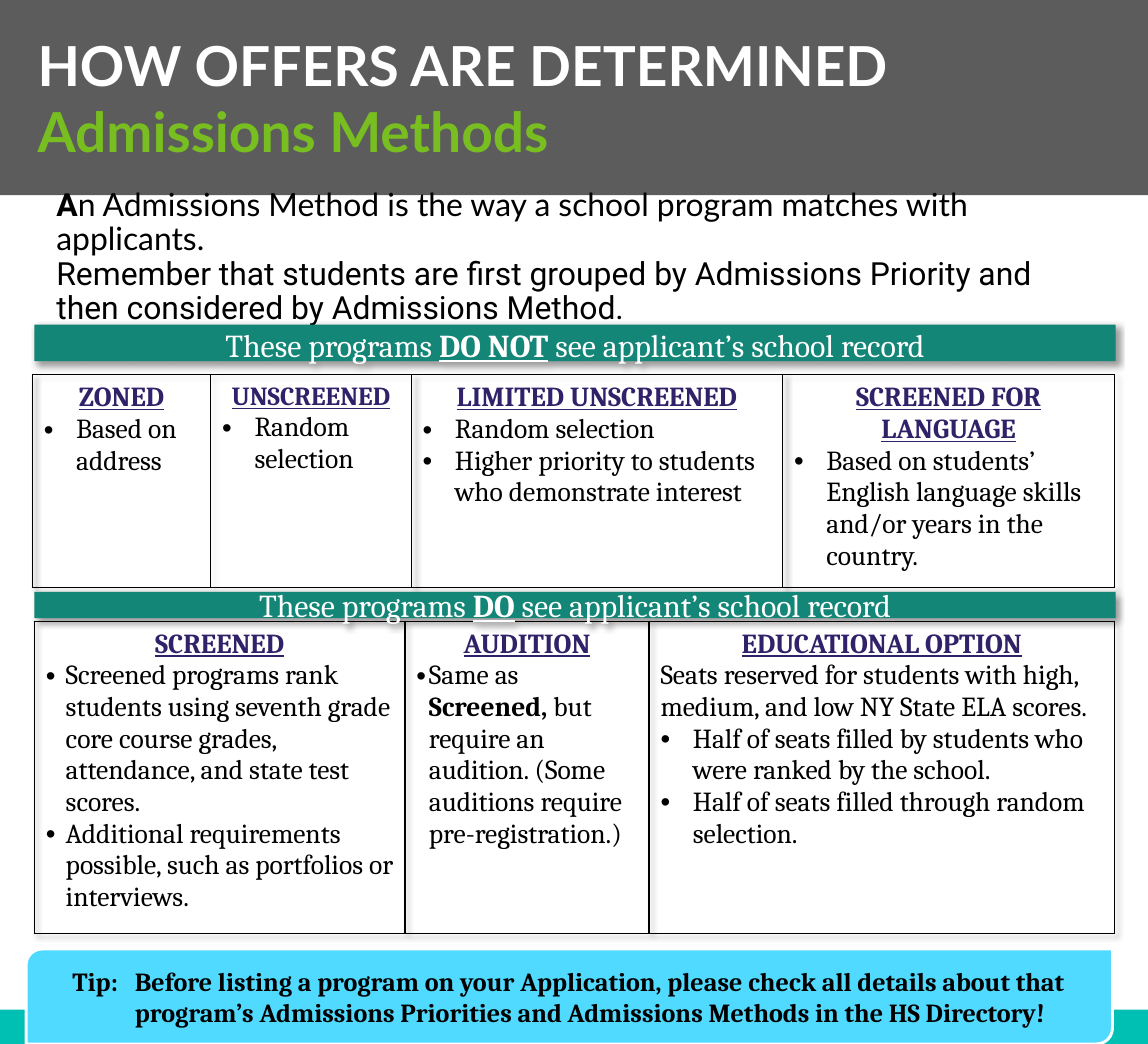
import pptx
import pptx.util
from lxml import etree
from pptx.dml.color import RGBColor
from pptx.enum.dml import MSO_THEME_COLOR
from pptx.enum.shapes import MSO_SHAPE
from pptx.enum.text import MSO_ANCHOR, MSO_AUTO_SIZE, PP_ALIGN
from pptx.oxml import parse_xml
from pptx.oxml.ns import nsdecls, qn
from pptx.util import Inches, Pt

WHITE = RGBColor(0xFF, 0xFF, 0xFF)
BLACK = RGBColor(0x00, 0x00, 0x00)
GRAY = RGBColor(0x40, 0x40, 0x40)
LIME = RGBColor(0x78, 0xBE, 0x20)
GREEN = RGBColor(0x13, 0x86, 0x77)
TEAL = RGBColor(0x00, 0xBF, 0xB3)
SKY = RGBColor(0x51, 0xDA, 0xFF)
PURPLE = RGBColor(0x30, 0x21, 0x69)

# Each column: heading, heading size, bullet indent, paragraphs.
# A leading "•" makes a bullet, and *text* is emphasised.
NO_RECORD = [
    ("ZONED", 19, 0.31, ["•Based on address"]),
    ("UNSCREENED", 18, 0.31, ["•Random selection"]),
    ("LIMITED UNSCREENED", 19, 0.31,
     ["•Random selection",
      "•Higher priority to students who demonstrate interest"]),
    ("SCREENED FOR LANGUAGE", 19, 0.31,
     ["•Based on students’ English language skills and/or years in the country."]),
]
RECORD = [
    ("SCREENED", 19, 0.19,
     ["•Screened programs rank students using seventh grade core course grades, "
      "attendance, and state test scores.",
      "•Additional requirements possible, such as portfolios or interviews."]),
    ("AUDITION", 19, 0.12,
     ["•Same as *Screened,* but require an audition. "
      "(Some auditions require pre-registration.)"]),
    ("EDUCATIONAL OPTION", 19, 0.31,
     ["Seats reserved for students with high, medium, and low NY State ELA scores.",
      "•Half of seats filled by students who were ranked by the school.",
      "•Half of seats filled through random selection."]),
]


def place(box, left, top, width, height):
    box.left, box.top = Inches(left), Inches(top)
    box.width, box.height = Inches(width), Inches(height)


def set_margins(area, left, top, right, bottom):
    area.margin_left, area.margin_top = Inches(left), Inches(top)
    area.margin_right, area.margin_bottom = Inches(right), Inches(bottom)


def style(font, name, size, color, bold=False):
    font.name, font.size, font.bold = name, Pt(size), bold
    font.color.rgb = color


def add_spans(para, text, underline=False):
    """Add runs, with the parts between asterisks in bold."""
    for number, part in enumerate(text.split("*")):
        span = para.add_run()
        span.text = part
        if number % 2:
            span.font.bold = True
            span.font.underline = underline


def set_indent(para, margin, first, bullet=None):
    props = para._p.get_or_add_pPr()
    props.set("marL", str(Inches(margin)))
    props.set("indent", str(Inches(first)))
    if bullet:
        etree.SubElement(props, qn("a:buFont")).set("typeface", "Arial")
        etree.SubElement(props, qn("a:buChar")).set("char", bullet)
    else:
        etree.SubElement(props, qn("a:buNone"))


def shadow_effect():
    return parse_xml(
        f'<a:effectLst {nsdecls("a")}><a:outerShdw blurRad="{Pt(4)}" '
        f'dist="{Pt(3)}" dir="2700000" algn="tl" rotWithShape="0">'
        '<a:srgbClr val="000000"><a:alpha val="40000"/></a:srgbClr>'
        '</a:outerShdw></a:effectLst>')


def add_box(page, kind, fill, *place_at):
    box = page.shapes.add_shape(kind, *map(Inches, place_at))
    box.shadow.inherit = False
    box.fill.solid()
    box.fill.fore_color.rgb = fill
    box.line.fill.background()
    box.text_frame.vertical_anchor = MSO_ANCHOR.MIDDLE
    return box


def add_banner(page, top, height, text, line_spacing, before, after):
    box = add_box(page, MSO_SHAPE.RECTANGLE, GREEN, 0.33, top, 10.36, height)
    props = box._element.spPr
    props.replace(props.find(qn("a:effectLst")), shadow_effect())
    set_margins(box.text_frame, 0.12, 0.06, 0.12, 0.06)
    para = box.text_frame.paragraphs[0]
    para.alignment = PP_ALIGN.CENTER
    para.line_spacing = line_spacing
    para.space_before, para.space_after = Pt(before), Pt(after)
    add_spans(para, text, underline=True)
    style(para.font, "Cambria", 22, WHITE)


def add_borders(cell):
    props = cell._tc.get_or_add_tcPr()
    for position, side in enumerate("LRTB"):
        props.insert(position, parse_xml(
            f'<a:ln{side} {nsdecls("a")} w="{Pt(1)}"><a:solidFill>'
            f'<a:srgbClr val="{BLACK}"/></a:solidFill></a:ln{side}>'))


def fill_cell(cell, heading, size, indent, lines):
    cell.fill.background()
    set_margins(cell, 0.11, 0.07, 0.11, 0.07)
    add_borders(cell)
    para = cell.text_frame.paragraphs[0]
    para.text = heading
    para.alignment = PP_ALIGN.CENTER
    style(para.font, "Cambria", size, PURPLE, bold=True)
    para.font.underline = True
    for line in lines:
        para = cell.text_frame.add_paragraph()
        if line.startswith("•"):
            set_indent(para, indent, -indent, "•")
        add_spans(para, line.lstrip("•"))
        style(para.font, "Cambria", 19, BLACK)


def add_methods(page, left, top, height, widths, methods):
    frame = page.shapes.add_table(1, len(methods), Inches(left), Inches(top),
                                  Inches(sum(widths)), Inches(height))
    table = frame.table
    table.first_row = table.horz_banding = False
    table._tbl.tblPr.insert(0, shadow_effect())
    for column, width, method in zip(table.columns, widths, methods):
        column.width = Inches(width)
    for cell, method in zip(table.rows[0].cells, methods):
        fill_cell(cell, *method)


def fill_title(title):
    place(title, 0, 0, 11, 1.87)
    title.fill.solid()
    title.fill.fore_color.rgb = GRAY
    color = title._element.spPr.find(".//" + qn("a:srgbClr"))
    etree.SubElement(color, qn("a:alpha")).set("val", "85000")
    frame = title.text_frame
    frame.auto_size = MSO_AUTO_SIZE.NONE
    frame.vertical_anchor = MSO_ANCHOR.MIDDLE
    set_margins(frame, 0.36, 0.06, 0.12, 0.06)
    frame.text = "HOW OFFERS ARE DETERMINED\nAdmissions Methods"
    for para, color in zip(frame.paragraphs, (WHITE, LIME)):
        para.alignment = PP_ALIGN.LEFT
        style(para.font, "Lato", 38, color, bold=True)


def fill_intro(body):
    place(body, 0.42, 1.75, 10.08, 1.45)
    frame = body.text_frame
    frame.auto_size = MSO_AUTO_SIZE.SHAPE_TO_FIT_TEXT
    set_margins(frame, 0.12, 0.06, 0.12, 0.06)
    para = frame.paragraphs[0]
    set_indent(para, 0, 0)
    para.line_spacing, para.space_before = 0.9, Pt(14.4)
    spans = [
        ("A", "Roboto", True),
        ("n Admissions Method is the way a school program matches with applicants.",
         "Lato", False),
        ("Remember that students are first grouped by Admissions Priority "
         "and then considered by Admissions Method.", "Roboto", False),
    ]
    for text, font, bold in spans:
        if text.startswith("Remember"):
            para.add_line_break()
        span = para.add_run()
        span.text = text
        style(span.font, font, 22, BLACK, bold)


def add_tip(page):
    box = add_box(page, MSO_SHAPE.ROUND_2_DIAG_RECTANGLE, SKY, 0.25, 9.09, 10.41, 0.91)
    box.line.color.rgb = WHITE
    box.line.width = Pt(2)
    para = box.text_frame.paragraphs[0]
    para.alignment = PP_ALIGN.LEFT
    set_indent(para, 0.9, -0.6)
    add_spans(para, "Tip: \tBefore listing a program on your Application, please check "
              "all details about that program’s Admissions Priorities and "
              "Admissions Methods in the HS Directory!")
    style(para.font, "Cambria", 18, BLACK, bold=True)


def main():
    deck = pptx.Presentation()
    deck.slide_width, deck.slide_height = Inches(11), Inches(10)
    page = deck.slides.add_slide(deck.slide_layouts[1])
    fill_title(page.shapes.title)
    fill_intro(page.placeholders[1])
    add_methods(page, 0.31, 3.59, 1.95, [1.71, 1.92, 3.56, 3.18], NO_RECORD)
    add_methods(page, 0.33, 5.95, 2.87, [3.55, 2.34, 4.46], RECORD)
    add_banner(page, 3.11, 0.35,
               "These programs *DO NOT* see applicant’s school record", 1.1, 7.2, 7.2)
    add_banner(page, 5.67, 0.25,
               "These programs *DO* see applicant’s school record", 1, 7, 0)
    add_box(page, MSO_SHAPE.RECTANGLE, TEAL, 0, 9.67, 11, 0.33)
    add_tip(page)
    deck.save("out.pptx")


if __name__ == "__main__":
    main()
